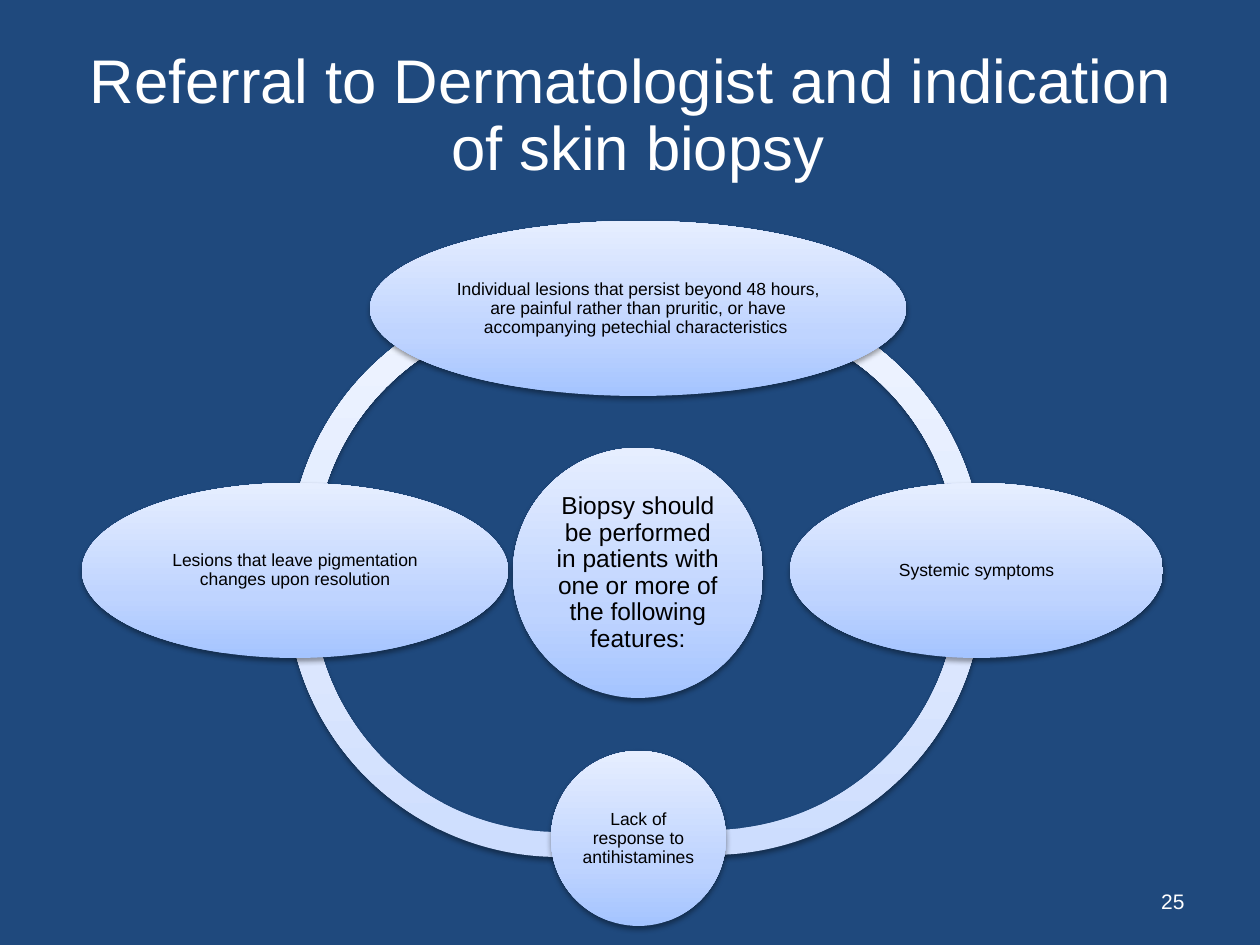
from pptx import Presentation
from pptx.dml.color import RGBColor
from pptx.enum.shapes import MSO_SHAPE
from pptx.enum.text import MSO_ANCHOR, MSO_AUTO_SIZE, PP_ALIGN
from pptx.oxml import parse_xml
from pptx.oxml.ns import nsdecls
from pptx.util import Emu, Pt

SCALE = 914400 / 126
NAVY = RGBColor(0x1F, 0x49, 0x7D)
WHITE = RGBColor(0xFF, 0xFF, 0xFF)
BLACK = RGBColor(0x00, 0x00, 0x00)
RING_COLORS = (RGBColor(0xCD, 0xDD, 0xFE), RGBColor(0xDB, 0xE6, 0xFE), RGBColor(0xF0, 0xF5, 0xFF))
OVAL_COLORS = (RGBColor(0xA4, 0xC4, 0xFF), RGBColor(0xBF, 0xD4, 0xFF), RGBColor(0xE6, 0xEE, 0xFF))
STOPS = (0, 35000, 100000)


def add_glossy_shape(kind, box, colors):
    shape = slide.shapes.add_shape(kind, *[Emu(round(value * SCALE)) for value in box])
    shape.line.fill.background()
    stops = "".join(
        f'<a:gs pos="{position}"><a:srgbClr val="{color}"/></a:gs>'
        for position, color in zip(STOPS, colors)
    )
    properties = shape._element.spPr
    properties.ln.addprevious(parse_xml(
        f'<a:gradFill {nsdecls("a")} rotWithShape="1"><a:gsLst>{stops}</a:gsLst>'
        '<a:lin ang="16200000" scaled="0"/></a:gradFill>'
    ))
    properties.append(parse_xml(
        f'<a:effectLst {nsdecls("a")}><a:outerShdw blurRad="40000" dist="20000" dir="5400000" '
        'rotWithShape="0"><a:srgbClr val="000000"><a:alpha val="38000"/></a:srgbClr>'
        '</a:outerShdw></a:effectLst>'
    ))
    return shape


def write_text(shape, text, size, color, alignment, spacing):
    frame = shape.text_frame
    frame.word_wrap = True
    frame.auto_size = MSO_AUTO_SIZE.NONE
    frame.vertical_anchor = MSO_ANCHOR.MIDDLE
    frame.text = text
    paragraph = frame.paragraphs[0]
    paragraph.alignment = alignment
    paragraph.line_spacing = spacing
    paragraph.font.name = "Arial"
    paragraph.font.size = Pt(size)
    paragraph.font.color.rgb = color
    return frame


presentation = Presentation()
presentation.slide_width = Emu(round(1260 * SCALE))
presentation.slide_height = Emu(round(945 * SCALE))
slide = presentation.slides.add_slide(presentation.slide_layouts[5])
slide.background.fill.solid()
slide.background.fill.fore_color.rgb = NAVY

title = slide.shapes.title
title.left, title.top, title.width, title.height = [
    Emu(round(value * SCALE)) for value in (63, 38, 1134, 158)
]
title_frame = write_text(
    title, "Referral to Dermatologist and indication of skin biopsy ", 35.2, WHITE, PP_ALIGN.CENTER, 0.9
)
title_frame.paragraphs[0]._p.get_or_add_pPr().set("rtl", "1")

ring_arcs = [
    (289, 290, 178.06, 287.25),
    (287, 314, 72.69, 183.24),
    (440, 312, 357.11, 106.1),
    (440, 291, 253.95, 1.59),
]
for left, top, start_degrees, end_degrees in ring_arcs:
    arc = add_glossy_shape(MSO_SHAPE.BLOCK_ARC, (left, top, 543, 543), RING_COLORS)
    arc.adjustments[0] = start_degrees * 0.6
    arc.adjustments[1] = end_degrees * 0.6
    arc.adjustments[2] = 0.046

ovals = [
    ((513, 448, 250, 250), 14,
     "Biopsy should be performed in patients with one or more of the following features:"),
    ((370, 221, 536, 175), 10,
     "Individual lesions that persist beyond 48 hours, are painful rather than pruritic, "
     "or have accompanying petechial characteristics "),
    ((790, 483, 373, 175), 10, "Systemic symptoms"),
    ((551, 751, 175, 175), 10, "Lack of response to antihistamines"),
    ((82, 483, 426, 175), 10, "Lesions that leave pigmentation changes upon resolution"),
]
for box, size, text in ovals:
    oval = add_glossy_shape(MSO_SHAPE.OVAL, box, OVAL_COLORS)
    frame = write_text(oval, text, size, BLACK, PP_ALIGN.CENTER, 0.9)
    frame.margin_left = frame.margin_right = frame.margin_top = frame.margin_bottom = Pt(size / 10)

number = slide.shapes.add_textbox(*[Emu(round(value * SCALE)) for value in (903, 876, 294, 50)])
write_text(number, "25", 12, WHITE, PP_ALIGN.RIGHT, 1.0)

presentation.save("out.pptx")
